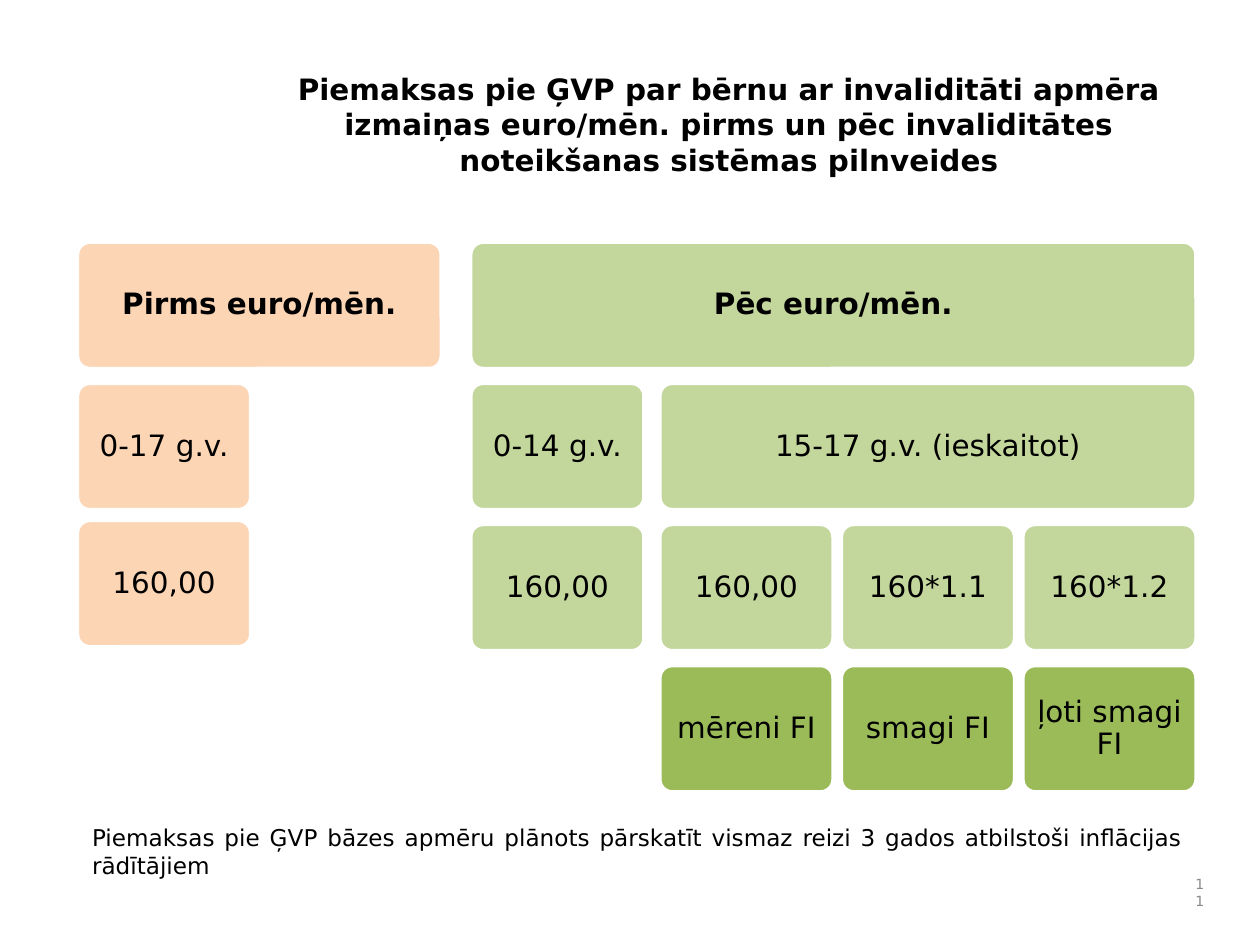
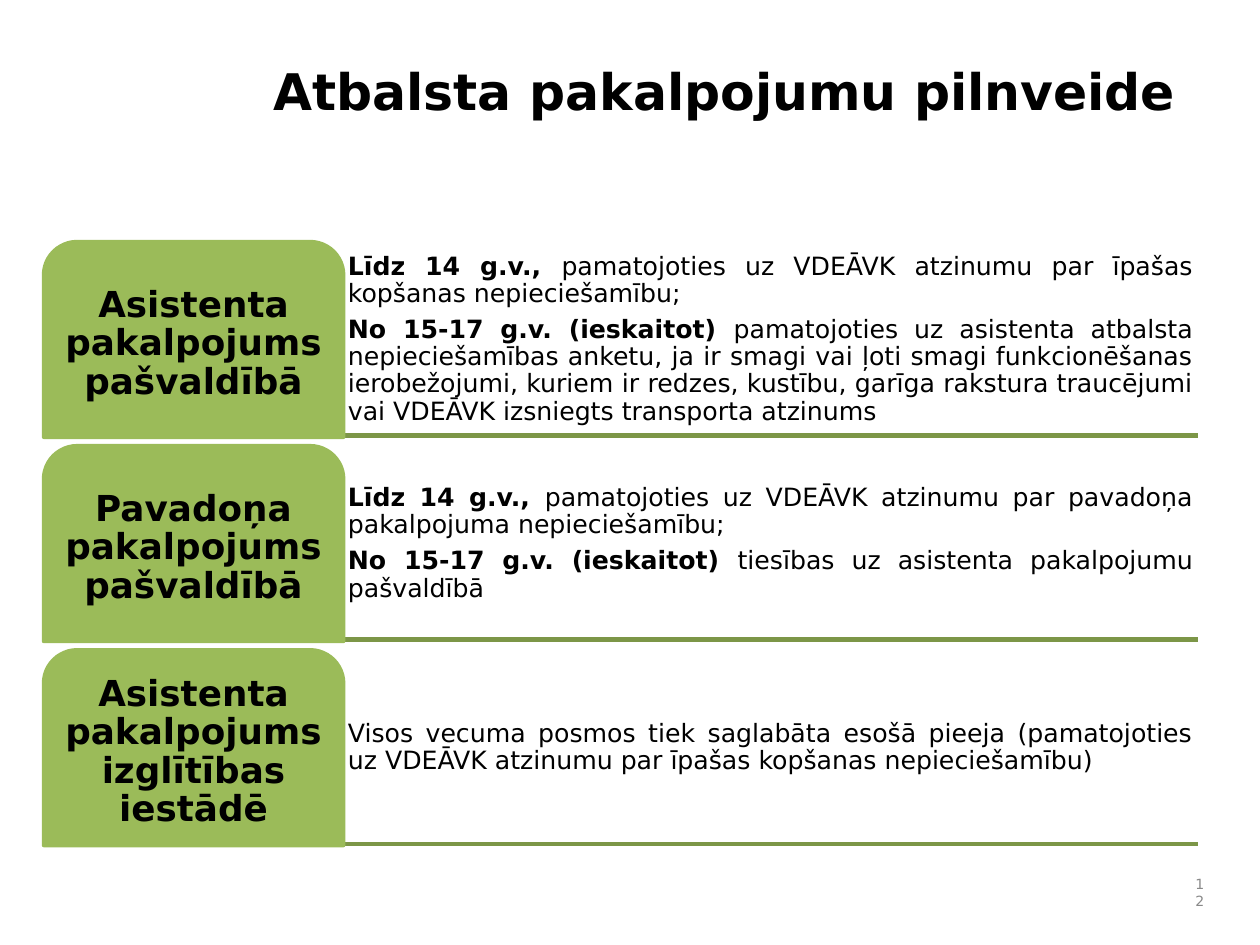
from pptx import Presentation
from pptx.dml.color import RGBColor
from pptx.enum.shapes import MSO_CONNECTOR, MSO_SHAPE
from pptx.enum.text import MSO_ANCHOR, MSO_AUTO_SIZE, PP_ALIGN
from pptx.util import Inches, Pt
from lxml import etree

ROUNDED, ROUND_TOP = MSO_SHAPE.ROUNDED_RECTANGLE, MSO_SHAPE.ROUND_2_SAME_RECTANGLE
STRAIGHT = MSO_CONNECTOR.STRAIGHT
TOP, MIDDLE = MSO_ANCHOR.TOP, MSO_ANCHOR.MIDDLE
NO_FIT = MSO_AUTO_SIZE.NONE
CENTER, RIGHT, JUSTIFY = PP_ALIGN.CENTER, PP_ALIGN.RIGHT, PP_ALIGN.JUSTIFY

FONT = "DejaVu Sans"
COLORS = {name: RGBColor.from_string(value) for name, value in {
    "text": "000000", "number": "898989", "white": "FFFFFF", "peach": "FCD5B5",
    "light": "C3D69B", "green": "9BBB59", "rule": "7C9647"}.items()}
A_NS = "http://schemas.openxmlformats.org/drawingml/2006/main"

prs = Presentation()
prs.slide_width, prs.slide_height = Inches(8.33), Inches(6.25)


def write(sp, paras, size, align, anchor=MIDDLE, color="text", inset=None, diagram=False):
    """Fill a shape with paragraphs, each a list of (text, bold) runs."""
    tf = sp.text_frame
    tf.auto_size = NO_FIT
    tf.word_wrap = True
    tf.vertical_anchor = anchor
    side, edge = (0.1, 0.05) if inset is None else (inset, inset)
    tf.margin_left = tf.margin_right = Inches(side)
    tf.margin_top = tf.margin_bottom = Inches(edge)
    for i, runs in enumerate(paras):
        p = tf.add_paragraph() if i else tf.paragraphs[0]
        p.alignment = align
        if diagram:
            p.line_spacing = 0.9
            p.space_after = Pt(round(size * 0.35, 1))
        for text, bold in runs:
            r = p.add_run()
            r.text = text
            r.font.name, r.font.size, r.font.bold = FONT, Pt(size), bold
            r.font.color.rgb = COLORS[color]


def add_box(s, kind, at, adjustments, fill, line):
    """Add a filled shape with a 2 pt outline."""
    sp = s.shapes.add_shape(kind, *map(Inches, at))
    sp.shadow.inherit = False
    for i, value in enumerate(adjustments):
        sp.adjustments[i] = value
    sp.fill.solid()
    sp.fill.fore_color.rgb = COLORS[fill]
    sp.line.color.rgb = COLORS[line]
    sp.line.width = Pt(2)
    return sp


# Titles and slide numbers
slides = []
for number, title, size, at, anchor in [
    ("11", "Piemaksas pie ĢVP par bērnu ar invaliditāti apmēra izmaiņas euro/mēn. "
     "pirms un pēc invaliditātes noteikšanas sistēmas pilnveides",
     14, (1.72, 0.35, 6.2, 0.94), MIDDLE),
    ("12", "Atbalsta pakalpojumu pilnveide", 24, (1.67, 0.35, 6.24, 0.55), TOP),
]:
    s = prs.slides.add_slide(prs.slide_layouts[5])
    sp = s.shapes.title
    sp.left, sp.top, sp.width, sp.height = map(Inches, at)
    write(sp, [[(title, True)]], size, CENTER, anchor)
    sp = s.shapes.add_textbox(Inches(7.78), Inches(5.76), Inches(0.28), Inches(0.28))
    write(sp, [[(number, False)]], 6.7, RIGHT, color="number")
    slides.append(s)
amounts, services = slides

# Slide 11: note below the boxes
sp = amounts.shapes.add_textbox(Inches(0.51), Inches(5.4), Inches(7.41), Inches(0.5))
write(sp, [[("Piemaksas pie ĢVP bāzes apmēru plānots pārskatīt vismaz reizi 3 gados "
             "atbilstoši inflācijas rādītājiem", False)]], 11, JUSTIFY, TOP)

# Slide 11: amounts before and after
BEFORE, AFTER, SPLIT = 0.51, 3.11, 4.36
CELL_W, CELL_H, STEP = 1.15, 0.84, 1.2
ROWS = [1.6 + i * 2.8 / 3 for i in range(4)]
SPLIT_W = 2 * STEP + CELL_W
boxes = [
    ("Pirms euro/mēn.", BEFORE, ROWS[0], 2.41, "peach"),
    ("0-17 g.v.", BEFORE, ROWS[1], CELL_W, "peach"),
    ("160,00", BEFORE, 3.44, CELL_W, "peach"),
    ("Pēc euro/mēn.", AFTER, ROWS[0], SPLIT - AFTER + SPLIT_W, "light"),
    ("0-14 g.v.", AFTER, ROWS[1], CELL_W, "light"),
    ("160,00", AFTER, ROWS[2], CELL_W, "light"),
    ("15-17 g.v. (ieskaitot)", SPLIT, ROWS[1], SPLIT_W, "light"),
]
for i, (amount, level) in enumerate([("160,00", "mēreni FI"), ("160*1.1", "smagi FI"),
                                     ("160*1.2", "ļoti smagi FI")]):
    left = SPLIT + i * STEP
    boxes += [(amount, left, ROWS[2], CELL_W, "light"), (level, left, ROWS[3], CELL_W, "green")]
for text, left, top, width, fill in boxes:
    sp = add_box(amounts, ROUNDED, (left, top, width, CELL_H), [0.1], fill, "white")
    write(sp, [[(text, top == ROWS[0])]], 14, CENTER, inset=0.06, diagram=True)

# Slide 12: one labelled row per service
UNTIL_14, FROM_15 = ("Līdz 14 g.v., ", True), ("No 15-17 g.v. (ieskaitot) ", True)
LEFT, LABEL_W, TEXT_W, ROW_H = 0.29, 1.98, 5.65, 1.29
rows = [
    ("Asistenta pakalpojums pašvaldībā", [
        [UNTIL_14, ("pamatojoties uz VDEĀVK atzinumu par īpašas kopšanas nepieciešamību;", False)],
        [FROM_15, ("pamatojoties uz asistenta atbalsta nepieciešamības anketu, ja ir smagi vai "
                   "ļoti smagi funkcionēšanas ierobežojumi, kuriem ir redzes, kustību, garīga "
                   "rakstura traucējumi vai VDEĀVK izsniegts transporta atzinums", False)]]),
    ("Pavadoņa pakalpojums pašvaldībā", [
        [UNTIL_14, ("pamatojoties uz VDEĀVK atzinumu par pavadoņa pakalpojuma nepieciešamību;",
                    False)],
        [FROM_15, ("tiesības uz asistenta pakalpojumu pašvaldībā", False)]]),
    ("Asistenta pakalpojums izglītības iestādē", [
        [("Visos vecuma posmos tiek saglabāta esošā pieeja (pamatojoties uz VDEĀVK atzinumu "
          "par īpašas kopšanas nepieciešamību)", False)]]),
]
for i, (label, paras) in enumerate(rows):
    top = 1.6 + i * 1.35
    y = Inches(top + ROW_H - 0.01)
    rule = services.shapes.add_connector(STRAIGHT, Inches(LEFT), y,
                                         Inches(LEFT + LABEL_W + TEXT_W), y)
    rule.line.color.rgb = COLORS["rule"]
    rule.line.width = Pt(2)
    etree.SubElement(rule._element.spPr, f"{{{A_NS}}}effectLst")
    sp = services.shapes.add_textbox(Inches(LEFT + LABEL_W), Inches(top),
                                     Inches(TEXT_W), Inches(ROW_H))
    write(sp, paras, 12, JUSTIFY, inset=0.03, diagram=True)
    sp = add_box(services, ROUND_TOP, (LEFT, top, LABEL_W, ROW_H), [0.17, 0], "green", "green")
    write(sp, [[(label, True)]], 17, CENTER, inset=0.04, diagram=True)

prs.save("out.pptx")
